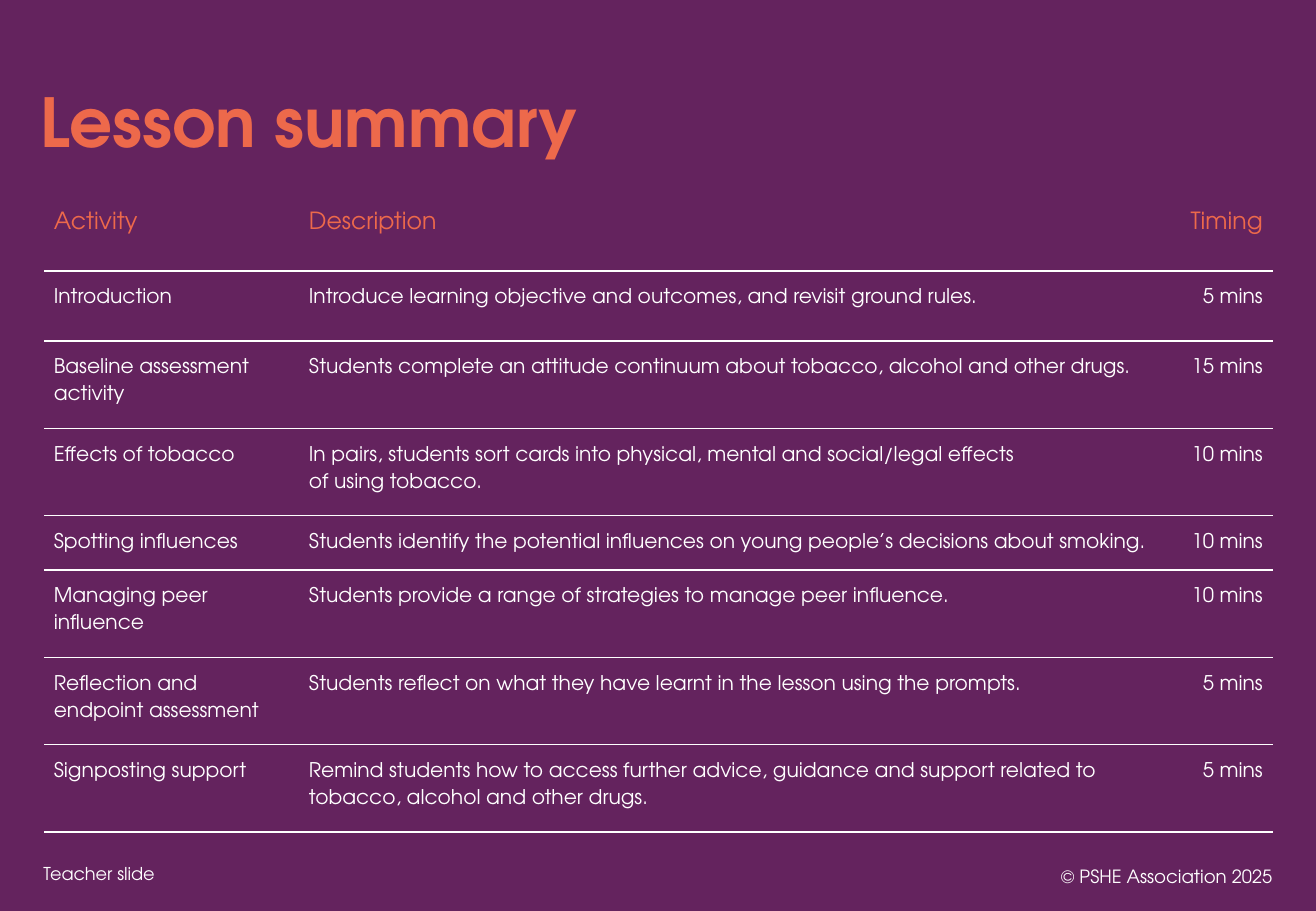
"""Build the lesson summary slide with its table of activities and timings."""
from lxml.etree import SubElement
from pptx import Presentation
from pptx.dml.color import RGBColor
from pptx.enum.text import MSO_ANCHOR as Anchor, MSO_AUTO_SIZE as Fit, PP_ALIGN as Align
from pptx.oxml import parse_xml
from pptx.oxml.ns import nsdecls, qn
from pptx.util import Inches, Pt

COLOURS = {"plum": "64235E", "coral": "ED694B", "white": "FFFFFF"}
FONT = "TeX Gyre Adventor"
PLAIN_TABLE = "{2D5ABB26-0587-4C30-8999-92F81FD0307C}"
WIDTH, HEIGHT = Inches(10.83), Inches(7.5)

TITLE = "Lesson summary"
HEADINGS = ("Activity", "Description", "Timing")
ACTIVITIES = [
    ("Introduction",
     "Introduce learning objective and outcomes, and revisit ground rules.", "5 mins"),
    ("Baseline assessment activity",
     "Students complete an attitude continuum about tobacco, alcohol and other drugs.", "15 mins"),
    ("Effects of tobacco",
     "In pairs, students sort cards into physical, mental and social/legal effects\vof using tobacco.",
     "10 mins"),
    ("Spotting influences",
     "Students identify the potential influences on young people’s decisions about smoking.",
     "10 mins"),
    ("Managing peer influence",
     "Students provide a range of strategies to manage peer influence.", "10 mins"),
    ("Reflection and endpoint assessment",
     "Students reflect on what they have learnt in the lesson using the prompts.", "5 mins"),
    ("Signposting support",
     "Remind students how to access further advice, guidance and support related to "
     "tobacco, alcohol and other drugs.", "5 mins"),
]
FOOTERS = [
    ("Teacher slide", (2.4, 94, 62.6, 3.87), {"size": 10.5, "anchor": Anchor.TOP}),
    ("© PSHE Association 2025", (75.07, 93.47, 22.53, 5.33), {"size": 10.8, "align": Align.RIGHT}),
]

TITLE_PLACE = (2.12, 8.67, 75.72, 10.13)
TABLE_CORNER = (3.35, 19.2)
COLUMN_SHARES = (18.65, 67.6, 7.1)
ROW_SHARES = (10.53, 7.7, 9.6, 9.6, 5.95, 9.6, 9.6, 9.6)
COLUMN_ALIGNS = (Align.LEFT, Align.LEFT, Align.RIGHT)
COLUMN_INSETS = (0.08, 0.16, 0.08)


def across(share):
    return round(WIDTH * share / 100)


def down(share):
    return round(HEIGHT * share / 100)


def place(left, top, width, height):
    return across(left), down(top), across(width), down(height)


def write(frame, text, size=12, colour="white", bold=False, align=Align.LEFT,
          anchor=Anchor.MIDDLE, spacing=None):
    frame.word_wrap = True
    frame.vertical_anchor = anchor
    para = frame.paragraphs[0]
    para.text = text
    para.alignment = align
    para.line_spacing = spacing
    for span in para.runs:
        span.font.name = FONT
        span.font.size = Pt(size)
        span.font.bold = bold
        span.font.color.rgb = RGBColor.from_string(COLOURS[colour])


def rule_cell(cell, sides):
    properties = cell._tc.get_or_add_tcPr()
    for index, side in enumerate(sides):
        line = parse_xml(f'<a:ln{side} {nsdecls("a")} w="{Pt(1)}"/>')
        fill = SubElement(line, qn("a:solidFill"))
        SubElement(fill, qn("a:srgbClr"), val=COLOURS["white"])
        properties.insert(index, line)


def add_summary(page):
    rows = [HEADINGS, *ACTIVITIES]
    area = place(*TABLE_CORNER, sum(COLUMN_SHARES), sum(ROW_SHARES))
    table = page.shapes.add_table(len(rows), len(HEADINGS), *area).table
    table._tbl.tblPr.find(qn("a:tableStyleId")).text = PLAIN_TABLE
    table.first_row = table.horz_banding = False
    for column, share in zip(table.columns, COLUMN_SHARES):
        column.width = across(share)
    for row, share in zip(table.rows, ROW_SHARES):
        row.height = down(share)
    heading_style = {"size": 14, "colour": "coral"}
    body_style = {"anchor": Anchor.TOP, "spacing": Pt(16)}
    for row_index, texts in enumerate(rows):
        style = body_style if row_index else heading_style
        for column_index, text in enumerate(texts):
            cell = table.cell(row_index, column_index)
            cell.margin_left = Inches(COLUMN_INSETS[column_index])
            cell.margin_right = cell.margin_top = cell.margin_bottom = Inches(0.08)
            cell.fill.background()
            write(cell.text_frame, text, align=COLUMN_ALIGNS[column_index], **style)
            cell.vertical_anchor = style.get("anchor", Anchor.MIDDLE)
            rule_cell(cell, "TB" if row_index else "B")


def main():
    deck = Presentation()
    deck.slide_width, deck.slide_height = WIDTH, HEIGHT
    page = deck.slides.add_slide(deck.slide_layouts.get_by_name("Title Only"))
    page.background.fill.solid()
    page.background.fill.fore_color.rgb = RGBColor.from_string(COLOURS["plum"])

    title = page.shapes.title
    title.left, title.top, title.width, title.height = place(*TITLE_PLACE)
    title.text_frame.auto_size = Fit.NONE
    write(title.text_frame, TITLE, size=40, colour="coral", bold=True, spacing=0.9)

    add_summary(page)
    for text, area, style in FOOTERS:
        write(page.shapes.add_textbox(*place(*area)).text_frame, text, **style)
    deck.save("out.pptx")


if __name__ == "__main__":
    main()
